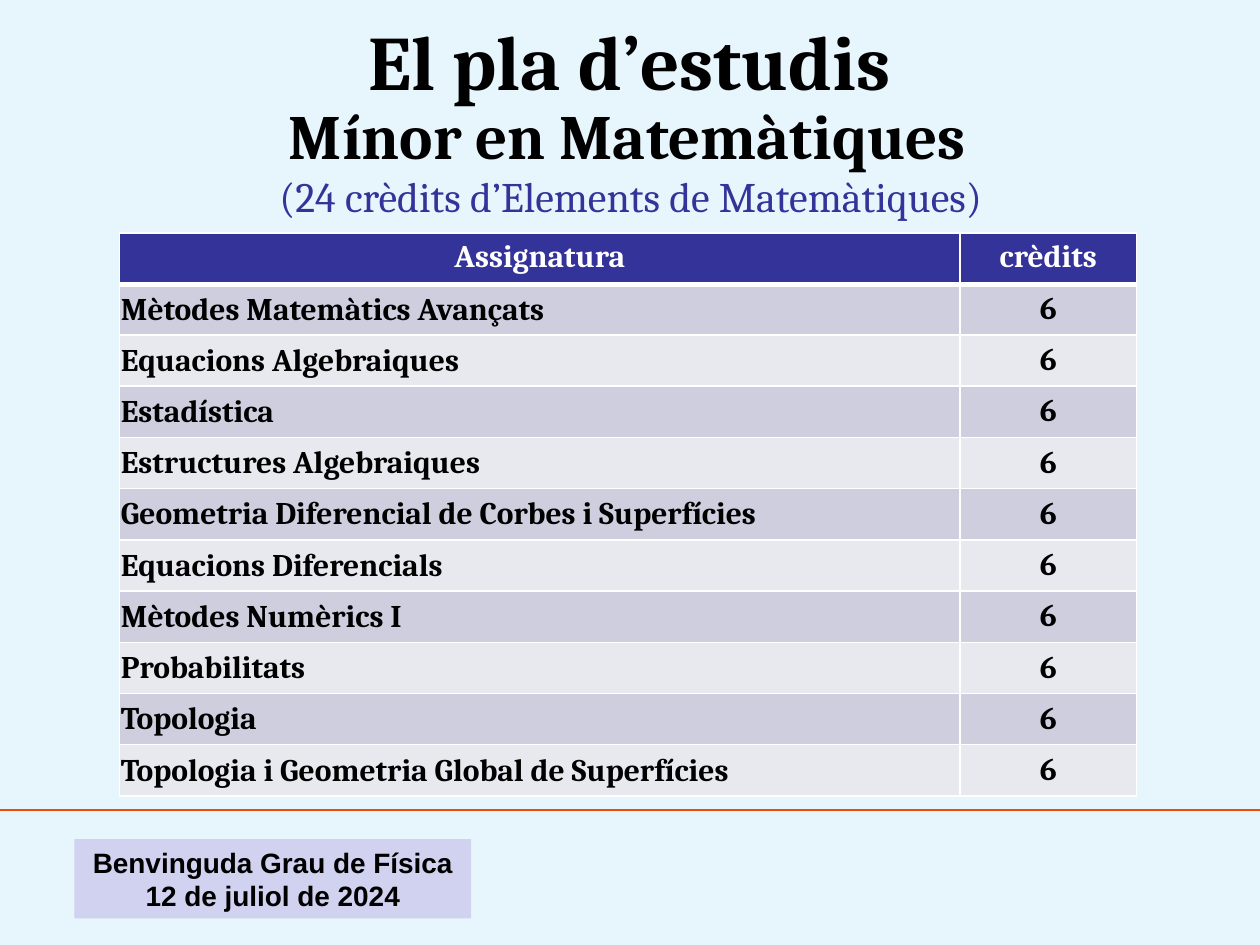
from lxml import etree
from pptx import Presentation
from pptx.dml.color import RGBColor
from pptx.enum.shapes import MSO_CONNECTOR, MSO_SHAPE
from pptx.enum.text import MSO_ANCHOR, PP_ALIGN
from pptx.oxml.ns import qn
from pptx.util import Inches, Pt

STRAIGHT = MSO_CONNECTOR.STRAIGHT
RECTANGLE = MSO_SHAPE.RECTANGLE
LEFT, CENTER = PP_ALIGN.LEFT, PP_ALIGN.CENTER
TOP, MIDDLE = MSO_ANCHOR.TOP, MSO_ANCHOR.MIDDLE

BLACK, WHITE, INDIGO = "000000", "FFFFFF", "333399"
BAND_FILLS = ("CECEDE", "E8E8EF")
CREDITS = "6"
SUBJECTS = (
    "Mètodes Matemàtics Avançats",
    "Equacions Algebraiques",
    "Estadística",
    "Estructures Algebraiques",
    "Geometria Diferencial de Corbes i Superfícies",
    "Equacions Diferencials",
    "Mètodes Numèrics I",
    "Probabilitats",
    "Topologia",
    "Topologia i Geometria Global de Superfícies",
)


def color(value):
    return RGBColor.from_string(value)


def fill_solid(target, value):
    target.fill.solid()
    target.fill.fore_color.rgb = color(value)


def write_text(frame, text, size, font="Cambria", text_color=BLACK, bold=True, align=CENTER):
    paragraph = frame.paragraphs[0]
    paragraph.alignment = align
    run = paragraph.add_run()
    run.text = text
    run.font.name = font
    run.font.size = Pt(size)
    run.font.bold = bold
    run.font.color.rgb = color(text_color)


def place(shape, left, top, width, height):
    shape.left, shape.top = Inches(left), Inches(top)
    shape.width, shape.height = Inches(width), Inches(height)


def add_heading_line(slide, box, anchor, text, size, **style):
    shape = slide.shapes.add_textbox(*map(Inches, box))
    frame = shape.text_frame
    frame.word_wrap = True
    frame.vertical_anchor = anchor
    write_text(frame, text, size, **style)


def add_headings(slide, left, top):
    title = slide.shapes.title
    place(title, left, top, 9, 0.69)
    title.text_frame.vertical_anchor = MIDDLE
    write_text(title.text_frame, "El pla d’estudis", 44)
    add_heading_line(slide, (left - 0.02, top + 0.31, 9, 1.25), MIDDLE,
                     "Mínor en Matemàtiques", 36)
    add_heading_line(slide, (left + 0.29, top + 1.17, 8.43, 0.39), TOP,
                     "(24 crèdits d’Elements de Matemàtiques)", 24,
                     text_color=INDIGO, bold=False)


def set_borders(cell, bottom_width):
    properties = cell._tc.get_or_add_tcPr()
    for side, width in (("L", 1), ("R", 1), ("T", 1), ("B", bottom_width)):
        line = etree.SubElement(properties, qn(f"a:ln{side}"), w=str(Pt(width)))
        solid = etree.SubElement(line, qn("a:solidFill"))
        etree.SubElement(solid, qn("a:srgbClr"), val=WHITE)


def format_cell(cell, text, fill, text_color=BLACK, align=CENTER, anchor=MIDDLE, bottom_width=1):
    set_borders(cell, bottom_width)
    fill_solid(cell, fill)
    cell.vertical_anchor = anchor
    write_text(cell.text_frame, text, 18, text_color=text_color, align=align)


def add_subject_table(slide, left, top, width, height):
    frame = slide.shapes.add_table(len(SUBJECTS) + 1, 2, *map(Inches, (left, top, width, height)))
    table = frame.table
    credits_width, first_row_height = 1.4, 0.38
    table.columns[0].width = Inches(width - credits_width)
    table.columns[1].width = Inches(credits_width)
    for row in table.rows:
        row.height = Inches((height - first_row_height) / len(SUBJECTS))
    table.rows[1].height = Inches(first_row_height)

    for column, heading in enumerate(("Assignatura", "crèdits")):
        format_cell(table.cell(0, column), heading, INDIGO, WHITE, anchor=TOP, bottom_width=3)
    for index, subject in enumerate(SUBJECTS):
        fill = BAND_FILLS[index % 2]
        name_cell = table.cell(index + 1, 0)
        name_cell.margin_left = name_cell.margin_right = name_cell.margin_top = Inches(0.01)
        name_cell.margin_bottom = 0
        format_cell(name_cell, subject, fill, align=LEFT)
        format_cell(table.cell(index + 1, 1), CREDITS, fill)


def add_footer(slide, left, top, width):
    rule = slide.shapes.add_connector(
        STRAIGHT, Inches(left), Inches(top), Inches(left + width), Inches(top))
    rule.line.color.rgb = color("F04C02")
    rule.line.width = Pt(1.5)
    etree.SubElement(rule._element.spPr, qn("a:effectLst"))

    label = slide.shapes.add_shape(
        RECTANGLE, Inches(left + 0.59), Inches(top + 0.23), Inches(3.15), Inches(0.63))
    label.shadow.inherit = False
    fill_solid(label, "D1D1F0")
    label.line.fill.background()
    label.text_frame.word_wrap = True
    label.text_frame.vertical_anchor = TOP
    write_text(label.text_frame, "Benvinguda Grau de Física 12 de juliol de 2024", 16, font="Arial")


def main():
    presentation = Presentation()
    presentation.slide_width = Inches(10)
    presentation.slide_height = Inches(7.5)
    slide = presentation.slides.add_slide(presentation.slide_layouts[5])
    fill_solid(slide.background, "E7F6FD")
    add_headings(slide, 0.5, 0.13)
    add_subject_table(slide, 0.95, 1.85, 8.07, 4.45)
    add_footer(slide, 0, 6.43, 10)
    presentation.save("out.pptx")


if __name__ == "__main__":
    main()
